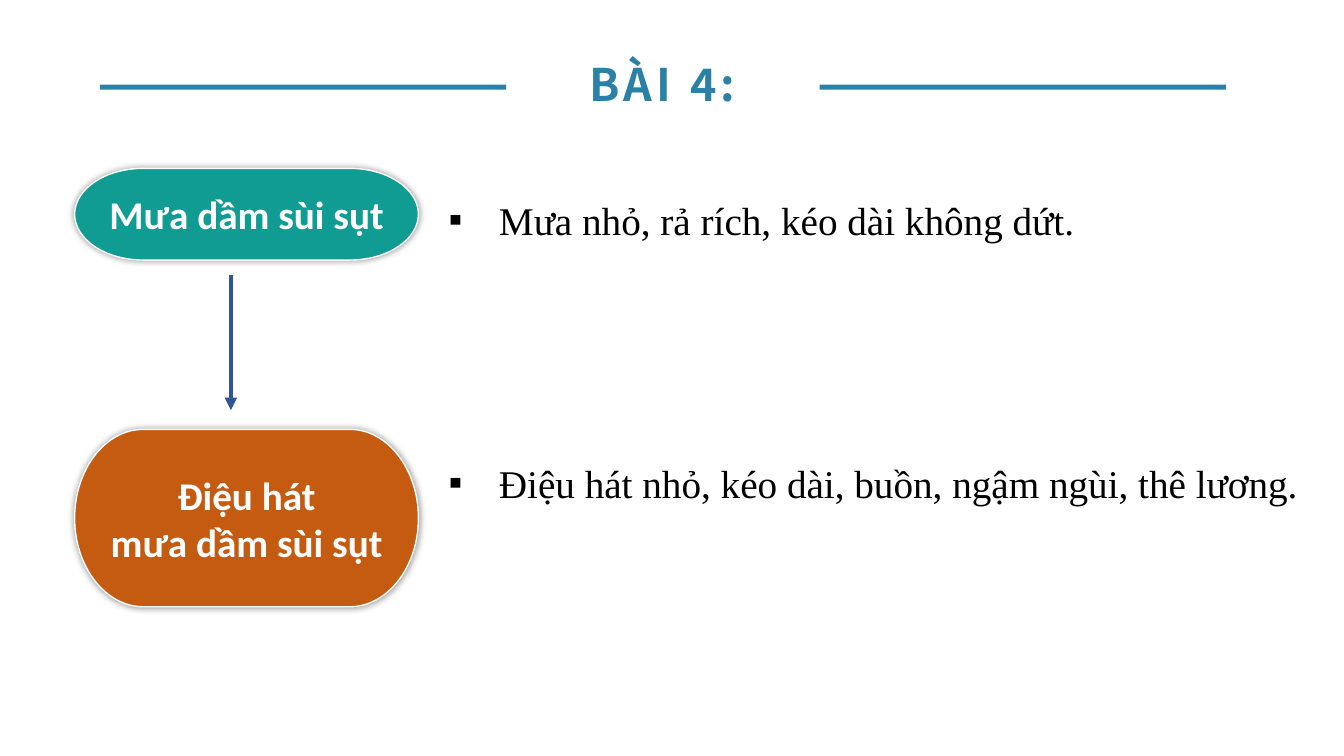
from dataclasses import dataclass

from lxml.etree import SubElement
from pptx import Presentation
from pptx.dml.color import RGBColor as RGB
from pptx.enum.shapes import MSO_CONNECTOR as CONN, MSO_SHAPE as SHAPE
from pptx.enum.text import MSO_ANCHOR as ANCHOR, MSO_AUTO_SIZE as FIT, PP_ALIGN as ALIGN
from pptx.oxml.ns import qn
from pptx.util import Inches, Pt


@dataclass(frozen=True)
class Theme:
    heading: RGB = RGB.from_string("2B80A5")
    teal: RGB = RGB.from_string("109C92")
    orange: RGB = RGB.from_string("C55A11")
    arrow: RGB = RGB.from_string("2F5597")
    white: RGB = RGB.from_string("FFFFFF")
    black: RGB = RGB.from_string("000000")
    title_size: Pt = Pt(32)
    body_size: Pt = Pt(28)
    title_font: str = "Noto Sans CJK SC"
    label_font: str = "Calibri"
    body_font: str = "Times New Roman"


@dataclass(frozen=True)
class Entry:
    """A phrase in a pill with its explanation to the right."""
    lines: tuple[str, ...]
    meaning: str
    top: float
    height: float
    fill: RGB
    meaning_top: float
    meaning_width: float


T = Theme()
TITLE = dict(name=T.title_font, size=T.title_size, bold=True)
LABEL = dict(name=T.label_font, size=T.body_size, bold=True)
BODY = dict(name=T.body_font, size=T.body_size, bold=False)

PILL_LEFT, PILL_WIDTH, PILL_RX = 0.74, 3.41, 0.68
ARC = 0.55  # control point distance for a quarter ellipse
MEANING_LEFT, INDENT = 4.35, 0.5
ENTRIES = (
    Entry(("Mưa dầm sùi sụt",), "Mưa nhỏ, rả rích, kéo dài không dứt.",
          1.67, 0.91, T.teal, 1.66, 8.81),
    Entry(("Điệu hát", "mưa dầm sùi sụt"),
          "Điệu hát nhỏ, kéo dài, buồn, ngậm ngùi, thê lương.",
          4.26, 1.76, T.orange, 4.27, 9.21),
)


def add_text(p, text: str, fmt: dict, color: RGB, align: ALIGN):
    p.alignment = align
    r = p.add_run()
    r.text = text
    for key, value in fmt.items():
        setattr(r.font, key, value)
    r.font.color.rgb = color
    return r


def add_rule(shapes, left: float) -> None:
    sp = shapes.add_shape(SHAPE.RECTANGLE, Inches(left), Inches(0.84),
                          Inches(4.03), Inches(0.05))
    sp.shadow.inherit = False
    sp.fill.solid()
    sp.fill.fore_color.rgb = T.heading
    sp.line.fill.background()


def add_title(shapes, text: str) -> None:
    tf = shapes.add_textbox(Inches(4.93), Inches(0.56),
                            Inches(3.28), Inches(0.54)).text_frame
    fmt = dict(word_wrap=True, vertical_anchor=ANCHOR.MIDDLE, auto_size=FIT.SHAPE_TO_FIT_TEXT,
               margin_left=0, margin_top=0, margin_right=0, margin_bottom=0)
    for key, value in fmt.items():
        setattr(tf, key, value)
    r = add_text(tf.paragraphs[0], text, TITLE, T.heading, ALIGN.CENTER)
    r.font._element.set("spc", "300")


def add_glow(sp) -> None:
    """Soft black shadow with no offset."""
    sp.shadow.inherit = False
    effects = sp._element.spPr.find(qn("a:effectLst"))
    shadow = SubElement(effects, qn("a:outerShdw"), blurRad=str(Pt(5)), dist="0",
                        dir="0", algn="ctr", rotWithShape="0")
    color = SubElement(shadow, qn("a:srgbClr"), val=str(T.black))
    SubElement(color, qn("a:alpha"), val="40000")


def round_ends(sp) -> None:
    """Turn the four slanted segments of the outline into quarter ellipses."""
    pts = list(sp._element.iter(qn("a:pt")))
    corners = [(int(pt.get("x")), int(pt.get("y"))) for pt in pts]
    for i in (2, 3, 5, 6):
        (x0, y0), (x1, y1) = corners[i - 1], corners[i]
        dx, dy = ARC * (x1 - x0), ARC * (y1 - y0)
        if i in (2, 5):  # leaves a flat side
            controls = (x0 + dx, y0), (x1, y1 - dy)
        else:            # leaves a pill tip
            controls = (x0, y0 + dy), (x1 - dx, y1)
        segment = pts[i].getparent()
        segment.tag = qn("a:cubicBezTo")
        for x, y in controls:
            SubElement(segment, qn("a:pt"), x=str(round(x)), y=str(round(y)))
        segment.append(pts[i])


def add_pill(shapes, entry: Entry) -> None:
    left, right = PILL_LEFT, PILL_LEFT + PILL_WIDTH
    top, bottom = entry.top, entry.top + entry.height
    middle = (top + bottom) / 2
    corners = ((left + PILL_RX, top), (right - PILL_RX, top), (right, middle),
               (right - PILL_RX, bottom), (left + PILL_RX, bottom),
               (left, middle), (left + PILL_RX, top))
    points = [(Inches(x), Inches(y)) for x, y in corners]
    outline = shapes.build_freeform(*points[0])
    outline.add_line_segments(points[1:], close=True)
    sp = outline.convert_to_shape()
    round_ends(sp)
    sp.fill.solid()
    sp.fill.fore_color.rgb = entry.fill
    sp.line.color.rgb = T.white
    sp.line.width = Pt(1)
    add_glow(sp)
    tf = sp.text_frame
    tf.word_wrap, tf.vertical_anchor = True, ANCHOR.MIDDLE
    for i, line in enumerate(entry.lines):
        p = tf.add_paragraph() if i else tf.paragraphs[0]
        add_text(p, line, LABEL, T.white, ALIGN.CENTER)


def add_meaning(shapes, entry: Entry) -> None:
    tf = shapes.add_textbox(Inches(MEANING_LEFT), Inches(entry.meaning_top),
                            Inches(entry.meaning_width), Inches(0.72)).text_frame
    tf.word_wrap, tf.auto_size = True, FIT.SHAPE_TO_FIT_TEXT
    p = tf.paragraphs[0]
    add_text(p, entry.meaning, BODY, T.black, ALIGN.JUSTIFY)
    p.line_spacing = 1.5
    pPr = p._p.get_or_add_pPr()
    pPr.set("marL", str(Inches(INDENT)))
    pPr.set("indent", str(-Inches(INDENT)))
    SubElement(pPr, qn("a:buFont"), typeface=T.body_font)
    SubElement(pPr, qn("a:buChar"), char="▪")


def add_arrow(shapes, x: float, top: float, bottom: float) -> None:
    c = shapes.add_connector(CONN.STRAIGHT, Inches(x), Inches(top),
                             Inches(x), Inches(bottom))
    c.line.color.rgb = T.arrow
    c.line.width = Pt(3)
    SubElement(c.line._get_or_add_ln(), qn("a:tailEnd"), type="triangle")
    SubElement(c._element.spPr, qn("a:effectLst"))


def main() -> None:
    prs = Presentation()
    prs.slide_width, prs.slide_height = Inches(13.33), Inches(7.5)
    shapes = prs.slides.add_slide(prs.slide_layouts[6]).shapes

    # Heading between two rules
    add_rule(shapes, 8.13)
    add_title(shapes, "BÀI 4:")
    add_rule(shapes, 0.99)

    # Phrases and their meanings
    for entry in ENTRIES:
        add_pill(shapes, entry)
        add_meaning(shapes, entry)

    # Arrow from the first phrase to the second
    add_arrow(shapes, 2.29, 2.73, 4.07)
    prs.save("out.pptx")


if __name__ == "__main__":
    main()
